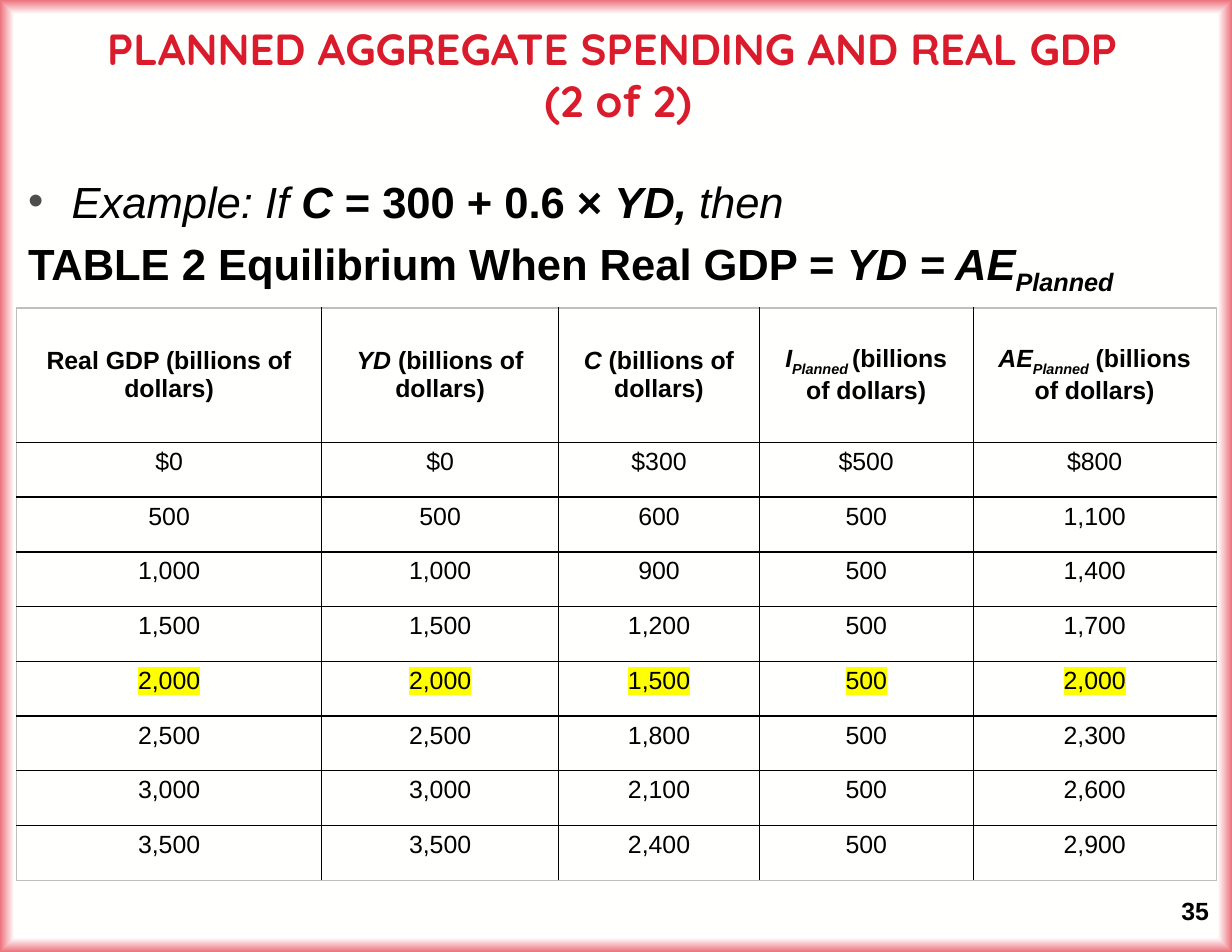
import pptx
import pptx.dml.color
import pptx.enum.text
import pptx.oxml
import pptx.oxml.ns
import pptx.util
from pptx.util import Inches

RED = pptx.dml.color.RGBColor(0xDA, 0x1B, 0x2C)
BLACK = pptx.dml.color.RGBColor(0, 0, 0)
BULLET_GREY = pptx.dml.color.RGBColor(0x4E, 0x4E, 0x4E)
EDGE_GREY = pptx.dml.color.RGBColor(0xBF, 0xBF, 0xBF)
YELLOW = pptx.dml.color.RGBColor(0xFF, 0xFF, 0)
BACKDROP_STOPS = ((97, pptx.dml.color.RGBColor(0xFF, 0xFF, 0xFE)),
                  (100, pptx.dml.color.RGBColor(0xED, 0x72, 0x7D)))

ALIGN = pptx.enum.text.PP_ALIGN
ANCHOR = pptx.enum.text.MSO_ANCHOR
GAP = pptx.util.Pt(6.2)
EQUILIBRIUM = 2000

# Each run is text, style (b bold, i italic, s subscript)
HEADERS = (
    (("Real GDP (billions of dollars)", "b"),),
    (("YD", "bi"), (" (billions of dollars)", "b")),
    (("C ", "bi"), ("(billions of dollars)", "b")),
    (("I", "bi"), ("Planned ", "bis"), ("(billions of dollars)", "b")),
    (("AE", "bi"), ("Planned", "bis"), (" (billions of dollars)", "b")),
)


def element(xml):
    return pptx.oxml.parse_xml(
        xml.replace("/>", f" {pptx.oxml.ns.nsdecls('a')}/>", 1) if xml.count("<") == 1
        else xml.replace(">", f" {pptx.oxml.ns.nsdecls('a')}>", 1))


def add_run(para, text, style="", size=16, color=BLACK, face="Arial"):
    span = para.add_run()
    span.text = text
    span.font.size = pptx.util.Pt(size)
    span.font.name = face
    span.font.bold = "b" in style
    span.font.italic = "i" in style
    span.font.color.rgb = color
    if "s" in style:
        span._r.get_or_add_rPr().set("baseline", "-25000")
    return span


def highlight(span):
    color_fill = span._r.rPr.find(pptx.oxml.ns.qn("a:solidFill"))
    color_fill.addnext(element(f'<a:highlight><a:srgbClr val="{YELLOW}"/></a:highlight>'))


def place(shape, box):
    shape.left, shape.top, shape.width, shape.height = (Inches(side) for side in box)


def set_insets(frame, top=0.1):
    frame.word_wrap = True
    frame.auto_size = pptx.enum.text.MSO_AUTO_SIZE.NONE
    frame.margin_left = frame.margin_right = frame.margin_bottom = Inches(0.1)
    frame.margin_top = Inches(top)


def paint_backdrop(page):
    fill = page.background.fill
    fill.gradient()
    for stop, (position, color) in zip(fill.gradient_stops, BACKDROP_STOPS):
        stop.color.rgb = color
        stop.position = position / 100
    gradient = page.background._cSld.find(".//" + pptx.oxml.ns.qn("a:gradFill"))
    linear = gradient.find(pptx.oxml.ns.qn("a:lin"))
    gradient.replace(linear, element(
        '<a:path path="rect"><a:fillToRect l="50000" t="50000" r="50000" b="50000"/></a:path>'))


def fill_title(page, box):
    title = page.shapes.title
    place(title, box)
    frame = title.text_frame
    set_insets(frame)
    frame.vertical_anchor = ANCHOR.MIDDLE
    para = frame.paragraphs[0]
    para.alignment = ALIGN.CENTER
    add_run(para, "PLANNED AGGREGATE SPENDING AND REAL GDP", "b", 28, RED, "Quicksand")
    para.add_line_break()
    add_run(para, " (2 of 2)", "b", 28, RED, "Quicksand")


def fill_body(page, box):
    body = page.placeholders[1]
    place(body, box)
    frame = body.text_frame
    set_insets(frame, top=0.15)
    frame.vertical_anchor = ANCHOR.TOP

    # Bulleted example
    example = frame.paragraphs[0]
    example.space_before = pptx.util.Pt(0)
    props = example._p.get_or_add_pPr()
    props.set("marL", str(Inches(0.39)))
    props.set("indent", str(-Inches(0.39)))
    props.append(element(f'<a:buClr><a:srgbClr val="{BULLET_GREY}"/></a:buClr>'))
    props.append(element('<a:buFont typeface="Arial"/>'))
    props.append(element('<a:buChar char="•"/>'))
    for text, style in (("Example: If ", "i"), ("C ", "bi"), ("= 300 + 0.6 × ", "b"),
                        ("YD, ", "bi"), ("then", "i")):
        add_run(example, text, style, 28)

    # Table caption
    caption = frame.add_paragraph()
    caption.space_before = GAP
    props = caption._p.get_or_add_pPr()
    props.set("marL", "0")
    props.set("indent", "0")
    props.append(element("<a:buNone/>"))
    for text, style in (("TABLE 2 Equilibrium When Real GDP = ", "b"),
                        ("YD = AE", "bi"), ("Planned", "bis")):
        add_run(caption, text, style, 28)


def spending_rows():
    """GDP equals YD, C = 300 + 0.6 × YD, and AE = C + I."""
    investment = 500
    for gdp in range(0, 3501, 500):
        consumption = 300 + gdp * 6 // 10
        yield gdp, gdp, consumption, investment, consumption + investment


def set_borders(cell, outer_sides):
    props = cell._tc.get_or_add_tcPr()
    for index, side in enumerate("LRTB"):
        color = EDGE_GREY if side in outer_sides else BLACK
        props.insert(index, element(
            f'<a:ln{side} w="{pptx.util.Pt(1)}"><a:solidFill>'
            f'<a:srgbClr val="{color}"/></a:solidFill></a:ln{side}>'))


def add_spending_table(page, box):
    rows = list(spending_rows())
    last_row, last_column = len(rows), len(HEADERS) - 1
    table = page.shapes.add_table(
        last_row + 1, len(HEADERS), *(Inches(side) for side in box)).table
    table.first_row = table.horz_banding = False
    for column, width in zip(table.columns, (2.72, 2.12, 1.79, 1.91, 2.17)):
        column.width = Inches(width)
    header_height = 1.2
    for index, row in enumerate(table.rows):
        row.height = Inches((box[3] - header_height) / last_row if index else header_height)

    # Header and value cells
    for r in range(last_row + 1):
        for c in range(last_column + 1):
            cell = table.cell(r, c)
            cell.fill.background()
            edges = (("L", c == 0), ("R", c == last_column), ("T", r == 0), ("B", r == last_row))
            set_borders(cell, [side for side, outer in edges if outer])
            cell.vertical_anchor = ANCHOR.TOP if r else ANCHOR.MIDDLE
            para = cell.text_frame.paragraphs[0]
            para.alignment = ALIGN.CENTER
            if r == 0:
                for text, style in HEADERS[c]:
                    add_run(para, text, style)
                continue
            values = rows[r - 1]
            span = add_run(para, f"{'$' if r == 1 else ''}{values[c]:,}")
            if values[0] == EQUILIBRIUM:
                highlight(span)


def add_page_number(page, box):
    number = page.shapes.add_textbox(*(Inches(side) for side in box))
    number.text_frame.word_wrap = False
    add_run(number.text_frame.paragraphs[0], "35", "b")


def main():
    deck = pptx.Presentation()
    deck.slide_width, deck.slide_height = Inches(11), Inches(8.5)
    page = deck.slides.add_slide(deck.slide_layouts[1])
    paint_backdrop(page)
    add_page_number(page, (10.45, 7.95, 0.48, 0.37))
    fill_title(page, (0, 0.04, 10.93, 1.24))
    fill_body(page, (0.15, 1.41, 10.71, 1.24))
    add_spending_table(page, (0.15, 2.75, 10.71, 5.11))
    deck.save("out.pptx")


if __name__ == "__main__":
    main()
